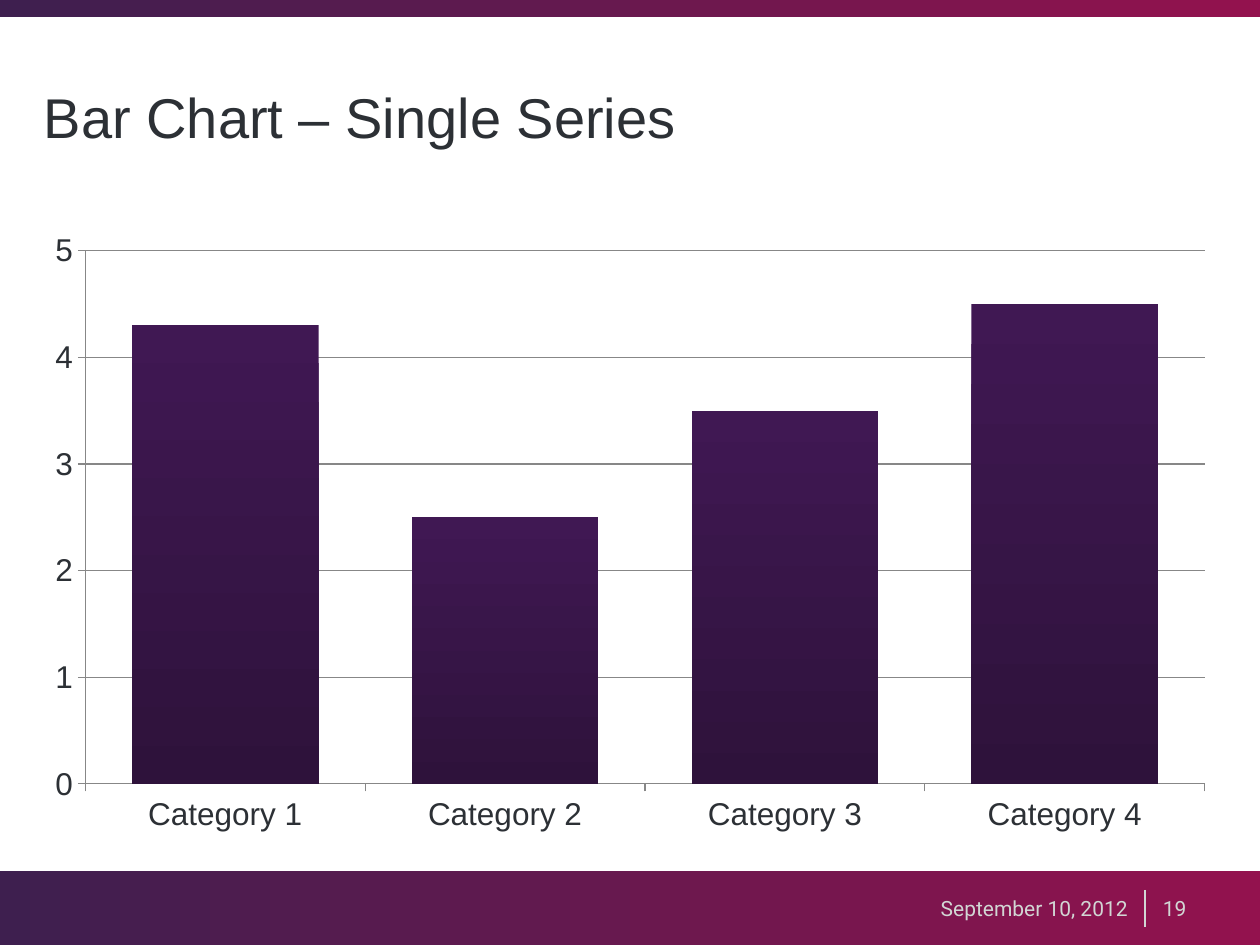
from lxml.etree import SubElement
from pptx import Presentation
from pptx.chart.data import CategoryChartData
from pptx.dml.color import RGBColor
from pptx.enum.chart import XL_CHART_TYPE, XL_TICK_MARK
from pptx.enum.shapes import MSO_CONNECTOR, MSO_SHAPE
from pptx.enum.text import MSO_ANCHOR, PP_ALIGN
from pptx.oxml.ns import qn
from pptx.util import Pt

PURPLE = RGBColor(0x3E, 0x1F, 0x4F)
CRIMSON = RGBColor(0x93, 0x12, 0x4E)
BAR_TOP = RGBColor(0x40, 0x18, 0x53)
BAR_BOTTOM = RGBColor(0x2E, 0x12, 0x3B)
INK = RGBColor(0x2C, 0x30, 0x35)
PALE = RGBColor(0xD2, 0xD6, 0xD4)
GRAY = RGBColor(0x87, 0x87, 0x87)


def write_text(frame, text, font="Arial", size=18, color=INK, align=PP_ALIGN.LEFT):
    paragraph = frame.paragraphs[0]
    paragraph.alignment = align
    run = paragraph.add_run()
    run.text = text
    run.font.name = font
    run.font.size = Pt(size)
    run.font.color.rgb = color


def fill_gradient(fill, start, end, angle):
    fill.gradient()
    fill.gradient_angle = angle
    for stop, color in zip(fill.gradient_stops, (start, end)):
        stop.color.rgb = color


class SlideBuilder:
    """Holds the current slide and draws each kind of element in its style."""

    def __init__(self, slide):
        self.slide = slide

    def band(self, top, height):
        shape = self.slide.shapes.add_shape(
            MSO_SHAPE.RECTANGLE, Pt(0), Pt(top), Pt(720), Pt(height))
        shape.shadow.inherit = False
        shape.line.fill.background()
        fill_gradient(shape.fill, PURPLE, CRIMSON, 0)

    def text(self, text, left, top, width, height, **text_format):
        box = self.slide.shapes.add_textbox(Pt(left), Pt(top), Pt(width), Pt(height))
        frame = box.text_frame
        frame.word_wrap = True
        frame.vertical_anchor = MSO_ANCHOR.MIDDLE
        frame.margin_top = frame.margin_bottom = 0
        write_text(frame, text, **text_format)

    def divider(self, x, top, bottom):
        line = self.slide.shapes.add_connector(
            MSO_CONNECTOR.STRAIGHT, Pt(x), Pt(top), Pt(x), Pt(bottom))
        line.line.color.rgb = PALE
        line.line.width = Pt(1)
        SubElement(line._element.spPr, qn("a:effectLst"))

    def column_chart(self, name, values, left, top, width, height):
        data = CategoryChartData()
        data.categories = list(values)
        data.add_series(name, values.values())
        chart = self.slide.shapes.add_chart(
            XL_CHART_TYPE.COLUMN_CLUSTERED, Pt(left), Pt(top), Pt(width), Pt(height),
            data).chart
        chart.has_legend = False
        chart.has_title = False
        chart.font.name = "Arial"
        chart.font.size = Pt(18)
        chart.font.color.rgb = INK

        # Axes and gridlines
        value_axis = chart.value_axis
        value_axis.minimum_scale = 0
        value_axis.maximum_scale = 5
        value_axis.major_unit = 1
        value_axis.has_major_gridlines = True
        for axis in (chart.category_axis, value_axis):
            axis.major_tick_mark = XL_TICK_MARK.OUTSIDE
            axis.minor_tick_mark = XL_TICK_MARK.NONE
        for axis_part in (chart.category_axis, value_axis, value_axis.major_gridlines):
            axis_part.format.line.color.rgb = GRAY
            axis_part.format.line.width = Pt(0.75)

        # Bars
        plot = chart.plots[0]
        plot.gap_width = 50
        plot.vary_by_categories = False
        fill_gradient(plot.series[0].format.fill, BAR_TOP, BAR_BOTTOM, 270)


def main():
    presentation = Presentation()
    presentation.slide_width = Pt(720)
    presentation.slide_height = Pt(540)
    slide = presentation.slides.add_slide(presentation.slide_layouts[6])
    builder = SlideBuilder(slide)

    # Top and bottom bands
    builder.band(0, 9.5)
    builder.band(498, 42)

    # Title and chart
    builder.text("Bar Chart – Single Series", 18, 21.6, 684, 90, size=32)
    values = {"Category 1": 4.3, "Category 2": 2.5, "Category 3": 3.5, "Category 4": 4.5}
    builder.column_chart("Series 1", values, 18, 126, 684, 356.4)

    # Footer
    footer = {"font": "Roboto", "size": 12, "color": PALE}
    builder.text("September 10, 2012", 484, 497, 167.6, 44, align=PP_ALIGN.RIGHT, **footer)
    builder.divider(654.3, 508.5, 529.5)
    builder.text("19", 657.4, 497.5, 62, 43, **footer)

    presentation.save("out.pptx")


if __name__ == "__main__":
    main()
